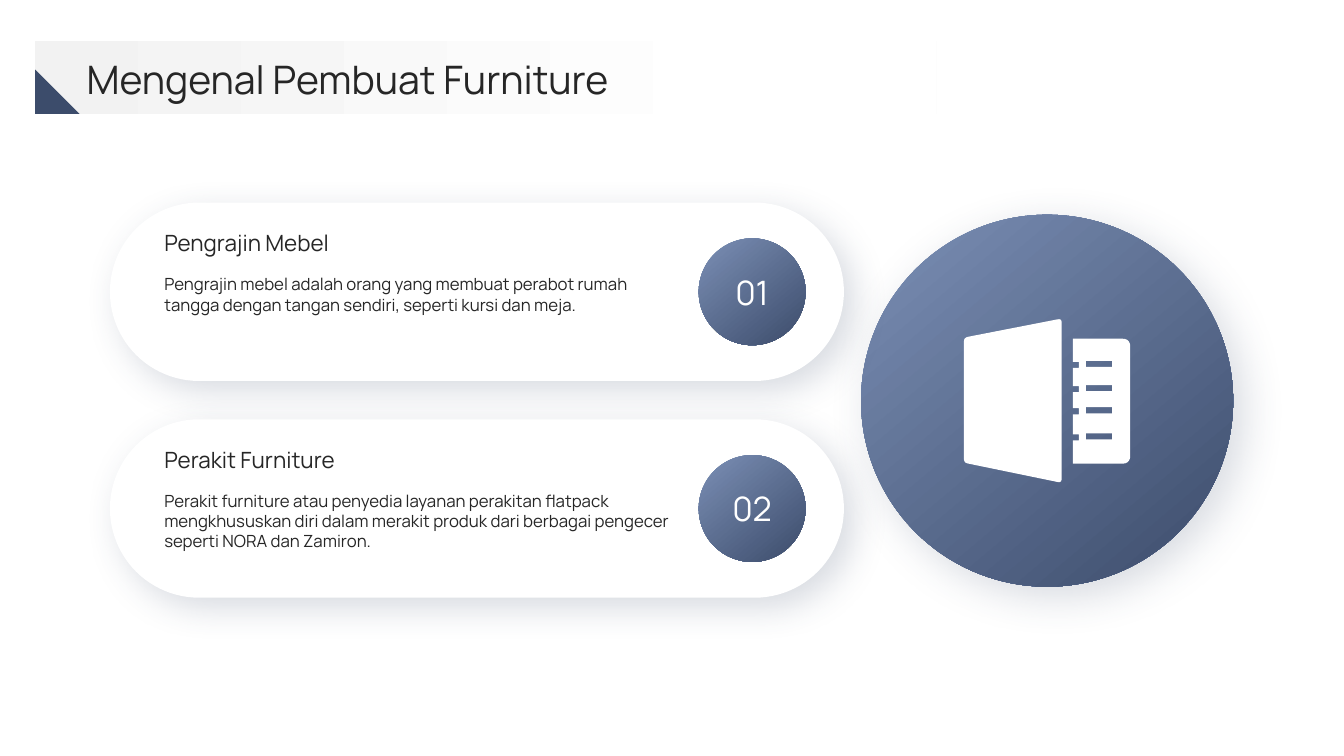
import math

from lxml import etree
from pptx import Presentation
from pptx import util as u
from pptx.dml import color
from pptx.enum import shapes, text
from pptx.oxml import ns

NAVY, STEEL, INK, WHITE = "3C4C6B", "7B8FB5", "262626", "FFFFFF"
SHAPE = shapes.MSO_SHAPE
LEFT, CENTER = text.PP_ALIGN.LEFT, text.PP_ALIGN.CENTER
TOP, MIDDLE = text.MSO_ANCHOR.TOP, text.MSO_ANCHOR.MIDDLE
UNITS = 1000  # outline units per inch

CARDS = [
    ("01", "Pengrajin Mebel",
     "Pengrajin mebel adalah orang yang membuat perabot rumah tangga "
     "dengan tangan sendiri, seperti kursi dan meja."),
    ("02", "Perakit Furniture",
     "Perakit furniture atau penyedia layanan perakitan flatpack "
     "mengkhususkan diri dalam merakit produk dari berbagai pengecer "
     "seperti NORA dan Zamiron."),
]


def rgb(hex_value):
    return color.RGBColor.from_string(hex_value)


def box_of(*lengths):
    return [u.Inches(length) for length in lengths]


def paint(part, *colors, angle=0, end=1.0):
    """Fill with one colour, or with a two-colour gradient (clockwise angle)."""
    part.shadow.inherit = False
    part.line.fill.background()
    if len(colors) == 1:
        part.fill.solid()
        part.fill.fore_color.rgb = rgb(colors[0])
        return
    part.fill.gradient()
    part.fill.gradient_angle = (360 - angle) % 360
    for stop, value, position in zip(part.fill.gradient_stops, colors, (0.0, end)):
        stop.color.rgb = rgb(value)
        stop.position = position


def cast_shadow(part, blur):
    effects = part._element.spPr.find(ns.qn("a:effectLst"))
    outer = etree.SubElement(effects, ns.qn("a:outerShdw"), {
        "blurRad": str(u.Pt(blur)), "dist": str(u.Pt(10)),
        "dir": str(45 * 60000), "algn": "tl", "rotWithShape": "0"})
    tint = etree.SubElement(outer, ns.qn("a:srgbClr"), val=NAVY)
    etree.SubElement(tint, ns.qn("a:alpha"), val="20000")


def write(part, words, size, ink=INK, align=LEFT, anchor=MIDDLE):
    frame = part.text_frame
    frame.text = words
    layout = {"word_wrap": True, "auto_size": text.MSO_AUTO_SIZE.NONE,
              "vertical_anchor": anchor, "margin_left": 0, "margin_right": 0,
              "margin_top": 0, "margin_bottom": 0}
    for name, value in layout.items():
        setattr(frame, name, value)
    paragraph = frame.paragraphs[0]
    paragraph.alignment = align
    font = paragraph.runs[0].font
    for name, value in {"name": "Manrope", "size": u.Pt(size)}.items():
        setattr(font, name, value)
    font.color.rgb = rgb(ink)


def add_header(slide, x, y, width, height):
    band = slide.shapes.add_shape(SHAPE.RECTANGLE, *box_of(x, y, width, height))
    paint(band, "F2F2F2", WHITE, end=0.8)

    # The title stands in front of the band
    title = slide.shapes.title
    title._element.getparent().append(title._element)
    place = box_of(x + 0.51, y + 0.12, 11.67, 0.51)
    for name, value in zip(("left", "top", "width", "height"), place):
        setattr(title, name, value)
    write(title, "Mengenal Pembuat Furniture", 28)

    side = 0.44
    corner = slide.shapes.add_shape(
        SHAPE.RIGHT_TRIANGLE, *box_of(x, y + height - side, side, side))
    paint(corner, NAVY)


def add_card(slide, x, y, width, height, number, heading, body):
    card = slide.shapes.add_shape(
        SHAPE.ROUNDED_RECTANGLE, *box_of(x, y, width, height))
    card.adjustments[0] = 0.5
    paint(card, WHITE)
    cast_shadow(card, 25)

    # Number badge, centred vertically
    size = 1.06
    badge = slide.shapes.add_shape(SHAPE.OVAL, *box_of(
        x + width - 1.44, y + (height - size) / 2, size, size))
    paint(badge, STEEL, NAVY, angle=50)
    write(badge, number, 24, WHITE, CENTER)

    # Heading and body
    for words, offset, tall, points, anchor in (
            (heading, 0.2, 0.4, 16, MIDDLE), (body, 0.71, 0.87, 12, TOP)):
        label = slide.shapes.add_textbox(*box_of(x + 0.54, y + offset, 5.08, tall))
        write(label, words, points, anchor=anchor)


def round_corner(before, corner, after, radius, steps=5):
    """Points of a curve that replaces a sharp corner."""
    def toward(point):
        share = radius / math.dist(corner, point)
        return [c + (p - c) * share for c, p in zip(corner, point)]

    start, end = toward(before), toward(after)
    for step in range(steps + 1):
        t = step / steps
        yield tuple((1 - t) ** 2 * a + 2 * t * (1 - t) * c + t * t * b
                    for a, c, b in zip(start, corner, end))


def add_wardrobe(slide, x, y):
    """Open door with a ruler behind it, 1.65 by 1.61 inches."""
    door_corners = [(0, 0.18), (0.97, -0.01), (0.97, 1.62), (0, 1.42)]
    door = [point for i, corner in enumerate(door_corners)
            for point in round_corner(door_corners[i - 1], corner,
                                      door_corners[(i + 1) % 4], 0.04)]

    # Ruler, with notches up its left edge
    left, top, right, bottom = 1.08, 0.19, 1.65, 1.43
    marks, thick = (0.41, 0.65, 0.87, 1.13), 0.06
    ruler = [(left, top),
             *round_corner((left, top), (right, top), (right, bottom), 0.08),
             *round_corner((right, top), (right, bottom), (left, bottom), 0.08),
             (left, bottom)]
    for mark in reversed(marks):
        high, low, inner = mark + 0.01, mark + 0.01 + thick, left + 0.06
        ruler += [(left, low), (inner, low), (inner, high), (left, high)]

    # Slots run against the clock, which makes them holes
    slots = [[(1.21, mark), (1.21, mark + thick), (1.47, mark + thick), (1.47, mark)]
             for mark in marks]

    outlines = [[(round((x + dx) * UNITS), round((y + dy) * UNITS))
                 for dx, dy in outline] for outline in (*slots, ruler, door)]
    builder = slide.shapes.build_freeform(*outlines[0][0], scale=u.Inches(1) / UNITS)
    for outline in outlines:
        if outline is not outlines[0]:
            builder.move_to(*outline[0])
        builder.add_line_segments(outline[1:], close=True)
    paint(builder.convert_to_shape(), WHITE)


def add_disc(slide, x, y, size):
    disc = slide.shapes.add_shape(SHAPE.OVAL, *box_of(x, y, size, size))
    paint(disc, STEEL, NAVY, angle=50)
    cast_shadow(disc, 30)


def main():
    deck = Presentation()
    deck.slide_width, deck.slide_height = box_of(13.33, 7.5)
    slide = deck.slides.add_slide(deck.slide_layouts.get_by_name("Title Only"))

    add_disc(slide, 8.54, 2.13, 3.69)
    for i, card in enumerate(CARDS):
        add_card(slide, 1.09, 2.01 + 2.15 * i, 7.28, 1.77, *card)
    add_wardrobe(slide, 9.56, 3.17)
    add_header(slide, 0.35, 0.41, 8.94, 0.72)
    deck.save("out.pptx")


if __name__ == "__main__":
    main()
